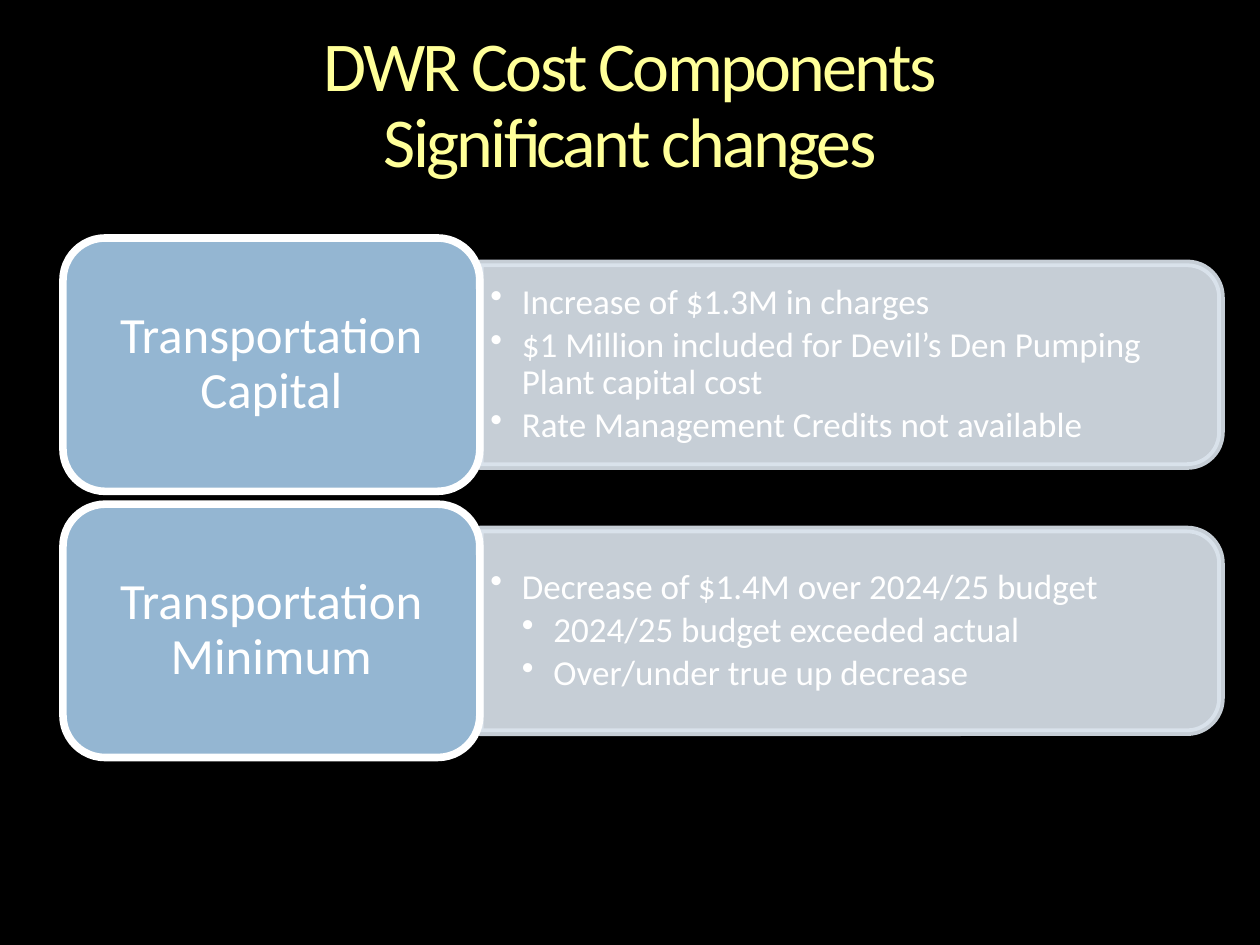
from lxml import etree
from pptx import Presentation
from pptx.dml.color import RGBColor
from pptx.enum.shapes import MSO_SHAPE
from pptx.enum.text import MSO_ANCHOR, MSO_AUTO_SIZE, PP_ALIGN
from pptx.oxml.ns import qn
from pptx.util import Pt

ROUND_RECT = MSO_SHAPE.ROUNDED_RECTANGLE
ROUND_TOP_RECT = MSO_SHAPE.ROUND_2_SAME_RECTANGLE
MIDDLE, TOP = MSO_ANCHOR.MIDDLE, MSO_ANCHOR.TOP
GROW = MSO_AUTO_SIZE.SHAPE_TO_FIT_TEXT
CENTER, LEFT = PP_ALIGN.CENTER, PP_ALIGN.LEFT

FONT = "Calibri"
COLORS = {
    "background": "000000",
    "title": "FFFF99",
    "panel": "DCE5EE",
    "label": "94B6D2",
    "text": "FFFFFF",
}
TITLE = "DWR Cost Components\nSignificant changes"
COMPONENTS = [
    ("Transportation Capital", [
        (1, "Increase of $1.3M in charges"),
        (1, "$1 Million included for Devil’s Den Pumping Plant capital cost"),
        (1, "Rate Management Credits not available"),
    ]),
    ("Transportation Minimum", [
        (1, "Decrease of $1.4M over 2024/25 budget"),
        (2, "2024/25 budget exceeded actual"),
        (2, "Over/under true up decrease"),
    ]),
]


def color(name):
    """Return a named colour."""
    return RGBColor.from_string(COLORS[name])


def set_margins(frame, side, edge):
    """Set the side and the top and bottom insets of a text frame."""
    frame.margin_left = frame.margin_right = Pt(side)
    frame.margin_top = frame.margin_bottom = Pt(edge)


def format_paragraph(paragraph, size, color_name, align):
    """Give a paragraph its spacing and its runs their font."""
    paragraph.alignment = align
    paragraph.line_spacing = 0.9
    for run in paragraph.runs:
        run.font.name = FONT
        run.font.size = Pt(size)
        run.font.color.rgb = color(color_name)


def add_bullet(paragraph, level):
    """Hang a bullet before a paragraph at its level."""
    paragraph.level = level
    properties = paragraph._p.get_or_add_pPr()
    properties.set("marL", str(Pt(18 * level)))
    properties.set("indent", str(-Pt(18)))
    etree.SubElement(properties, qn("a:buChar")).set("char", "•")


def add_block(slide, kind, left, top, width, height, fill, line):
    """Add a filled, outlined shape without a shadow."""
    block = slide.shapes.add_shape(kind, Pt(left), Pt(top), Pt(width), Pt(height))
    block.shadow.inherit = False
    block.fill.solid()
    block.fill.fore_color.rgb = color(fill)
    block.line.color.rgb = color(line)
    block.line.width = Pt(4.33)
    return block


def place_title(slide, left, top, width, height):
    """Fill the title placeholder and move it into its box."""
    title = slide.shapes.title
    title.left, title.top = Pt(left), Pt(top)
    title.width, title.height = Pt(width), Pt(height)
    frame = title.text_frame
    frame.auto_size = GROW
    frame.vertical_anchor = TOP
    set_margins(frame, 0, 0)
    heading = frame.paragraphs[0]
    heading.text = TITLE.replace("\n", "\v")
    format_paragraph(heading, 40, "title", CENTER)
    for run in heading.runs:
        run.font._element.set("spc", "-150")


def place_panel(slide, left, top, width, height, points):
    """Draw a panel rounded on its right side and list its points."""
    panel = add_block(slide, ROUND_TOP_RECT, left + (width - height) / 2,
                      top + (height - width) / 2, height, width, "panel", "panel")
    panel.rotation = 90
    for fill_color in panel._element.spPr.iter(qn("a:srgbClr")):
        etree.SubElement(fill_color, qn("a:alpha")).set("val", "90000")

    inset = 5.7
    details = slide.shapes.add_textbox(Pt(left), Pt(top + inset), Pt(width - inset),
                                       Pt(height - 2 * inset))
    frame = details.text_frame
    frame.word_wrap = True
    frame.vertical_anchor = MIDDLE
    set_margins(frame, 6, 3)
    frame.text = "\n".join(text for _, text in points)
    for paragraph, (level, _) in zip(frame.paragraphs, points):
        paragraph.space_after = Pt(3)
        format_paragraph(paragraph, 20, "text", LEFT)
        add_bullet(paragraph, level)


def place_label(slide, left, top, width, height, name):
    """Draw the rounded label that names a cost component."""
    label = add_block(slide, ROUND_RECT, left, top, width, height, "label", "text")
    frame = label.text_frame
    frame.word_wrap = True
    frame.vertical_anchor = MIDDLE
    set_margins(frame, 8.6, 4.3)
    frame.text = name
    format_paragraph(frame.paragraphs[0], 29, "text", CENTER)


def place_component(slide, left, top, width, height, name, points):
    """Place one cost component: its panel, then its label."""
    label_width = 0.36 * width
    panel_height = 0.8 * height
    place_panel(slide, left + label_width, top + (height - panel_height) / 2,
                width - label_width, panel_height, points)
    place_label(slide, left, top, label_width, height, name)


def main():
    """Build the slide and save it."""
    presentation = Presentation()
    presentation.slide_width, presentation.slide_height = Pt(720), Pt(540)
    slide = presentation.slides.add_slide(presentation.slide_layouts[5])
    slide.background.fill.solid()
    slide.background.fill.fore_color.rgb = color("background")

    place_title(slide, 30, 18, 660, 87)
    row_height, gap = 144.8, 7.3
    for row, (name, points) in enumerate(COMPONENTS):
        place_component(slide, 36, 136 + row * (row_height + gap), 661.7,
                        row_height, name, points)
    presentation.save("out.pptx")


if __name__ == "__main__":
    main()
